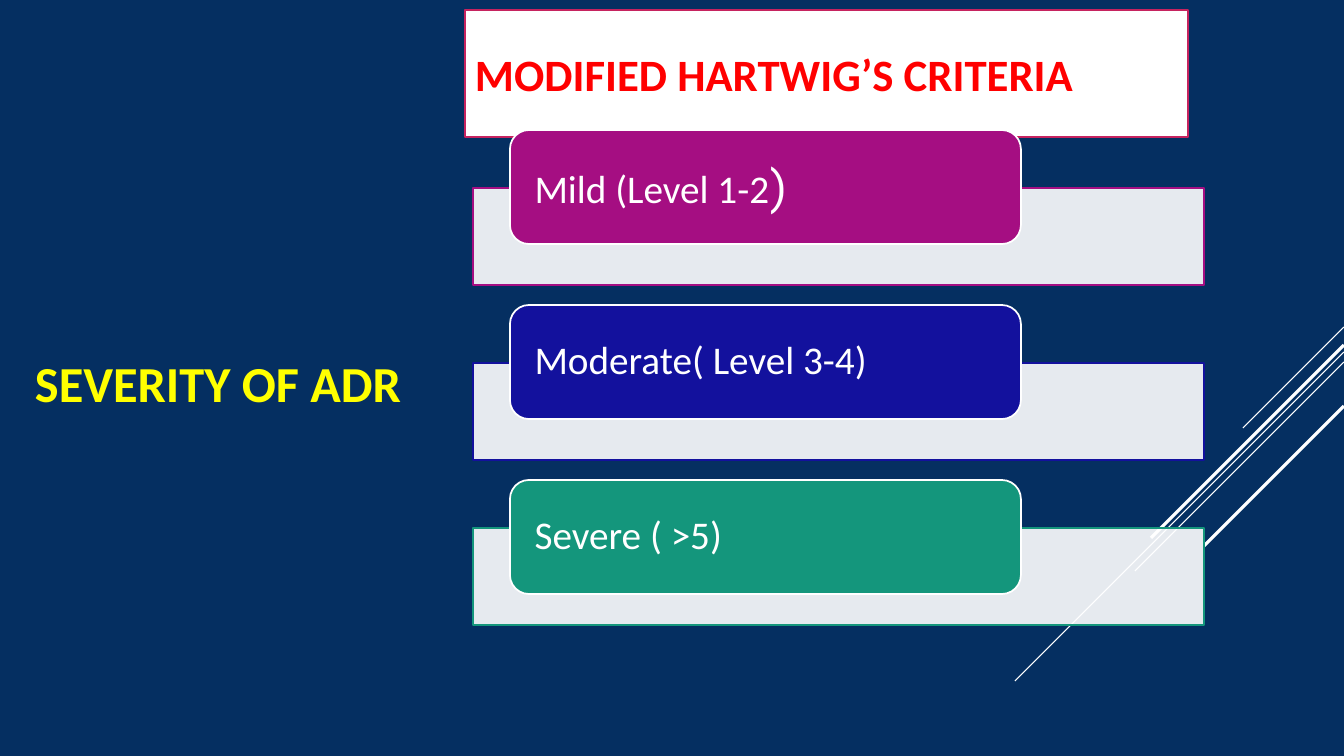
import pptx
import pptx.dml.color
import pptx.enum.shapes
import pptx.enum.text
import pptx.oxml.ns
import pptx.util
from lxml import etree

PX = 914400 / 100.8
THEME = {
    "back": "052F61", "white": "FFFFFF", "title": "FF0000", "edge": "C6235F",
    "side": "FFFF00", "mild": "A50E82", "mid": "13119D", "severe": "14967C",
    "font": "Calibri", "alt": "TeX Gyre Adventor",
    "big": 36, "head": 32, "body": 28, "thin": 0.75, "rim": 1.25, "thick": 2.25,
}
KIND = pptx.enum.shapes.MSO_SHAPE
RGB = pptx.dml.color.RGBColor.from_string
qn = pptx.oxml.ns.qn


def block(box, fill=None, edge=None, kind=KIND.RECTANGLE):
    """Add a shape at box (left, top, width, height in px)."""
    shape = slide.shapes.add_shape(kind, *[round(n * PX) for n in box])
    shape.shadow.inherit = False
    if fill:
        shape.fill.solid()
        shape.fill.fore_color.rgb = RGB(THEME[fill])
    else:
        shape.fill.background()
    if edge:
        shape.line.color.rgb = RGB(THEME[edge])
        shape.line.width = pptx.util.Pt(THEME["rim"])
    else:
        shape.line.fill.background()
    return shape


def write(shape, text, size="body", color="white", font="font", bold=False, pad=10):
    """Append a run to the left-aligned, vertically centred text of a shape."""
    frame = shape.text_frame
    frame.word_wrap = True
    frame.vertical_anchor = pptx.enum.text.MSO_ANCHOR.MIDDLE
    frame.margin_left = frame.margin_right = round(pad * PX)
    para = frame.paragraphs[0]
    para.alignment = pptx.enum.text.PP_ALIGN.LEFT
    run = para.add_run()
    run.text = text
    run.font.name = THEME[font]
    run.font.size = pptx.util.Pt(THEME[size])
    run.font.bold = bold
    run.font.color.rgb = RGB(THEME[color])


deck = pptx.Presentation()
deck.slide_width = round(1344 * PX)
deck.slide_height = round(756 * PX)
slide = deck.slides.add_slide(deck.slide_layouts[6])
slide.background.fill.solid()
slide.background.fill.fore_color.rgb = RGB(THEME["back"])

# Diagonal lines run down and left at 45 degrees from the right edge
for top, run, width in [
    (327, 101, "thin"), (352, 329, "thin"), (362, 209, "thin"),
    (345, 193, "thick"), (406, 140, "thick"),
]:
    ends = [round(n * PX) for n in (1344, top, 1344 - run, top + run)]
    line = slide.shapes.add_connector(pptx.enum.shapes.MSO_CONNECTOR.STRAIGHT, *ends)
    line.line.color.rgb = RGB(THEME["white"])
    line.line.width = pptx.util.Pt(THEME[width])
    etree.SubElement(line._element.spPr, qn("a:effectLst"))

title = block((465, 10, 723, 127), "white", "edge")
write(title, "MODIFIED HARTWIG’S CRITERIA", size="head", color="title", bold=True)

# Each level is a coloured label over a pale bar
levels = [
    ("mild", "Mild (Level 1-2", 188),
    ("mid", "Moderate( Level 3-4)", 363),
    ("severe", "Severe ( >5)", 528),
]
for row, (color, text, top) in enumerate(levels):
    bar = block((473, top, 731, 97), "white", color)
    tint = bar.fill._xPr.find(".//" + qn("a:srgbClr"))
    etree.SubElement(tint, qn("a:alpha"), val="90000")
    label = block((510, 130 + 175 * row, 511, 114), color, "white", KIND.ROUNDED_RECTANGLE)
    label.text_frame.margin_top = label.text_frame.margin_bottom = 0
    label.text_frame.paragraphs[0].line_spacing = 0.9
    write(label, text, pad=19)
    if color == "mild":
        write(label, ")", size="big", font="alt", pad=19)

side = block((25, 212, 389, 340))
write(side, "SEVERITY OF ADR", size="big", color="side", bold=True)

deck.save("out.pptx")
